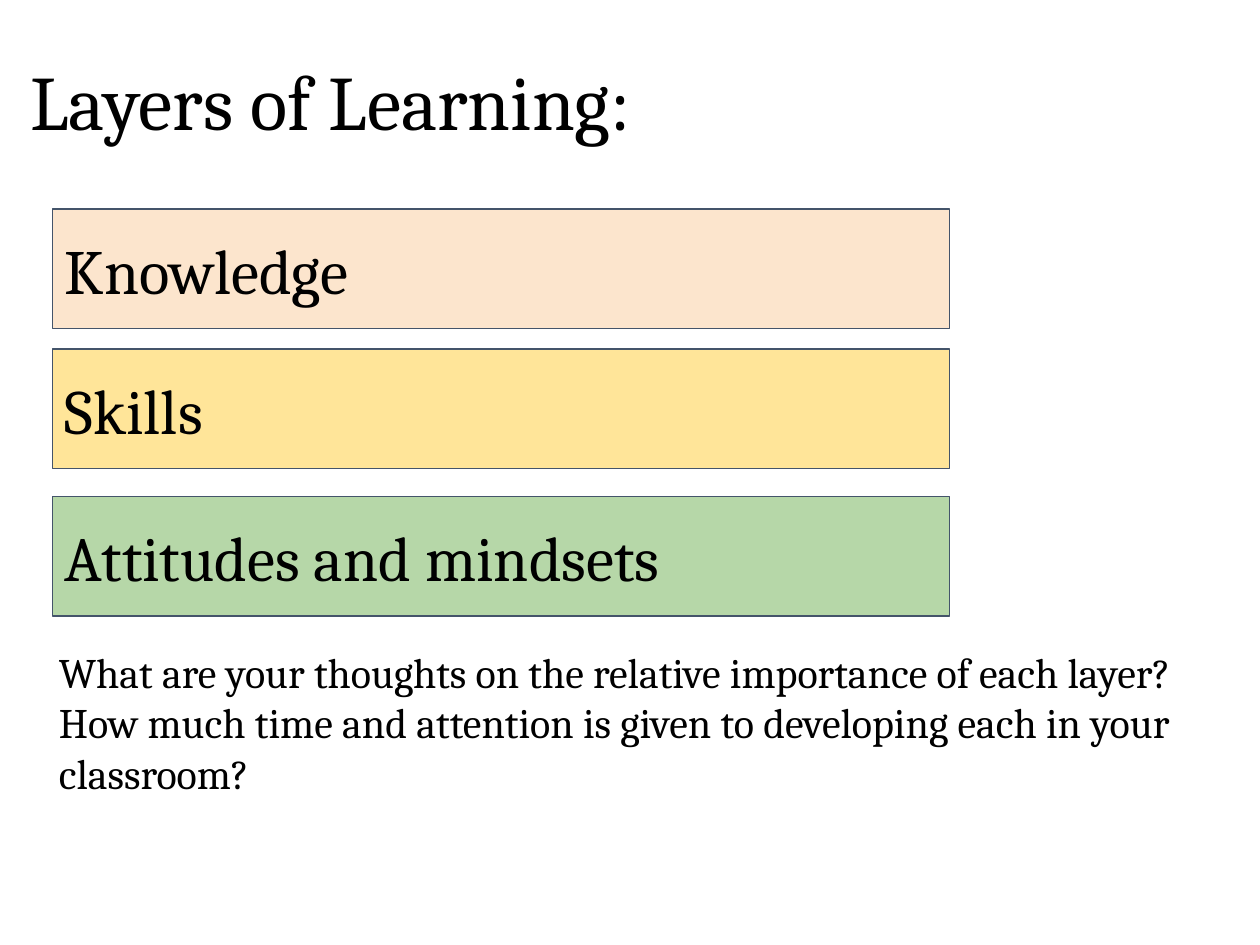
from pptx import Presentation
from pptx.dml.color import RGBColor
from pptx.enum.shapes import MSO_SHAPE
from pptx.enum.text import MSO_ANCHOR, PP_ALIGN
from pptx.util import Pt

BAR_LEFT, BAR_WIDTH, BAR_HEIGHT = 30, 512.6, 68.4
LAYERS = [
    ("Knowledge", 119.5, "FCE5CD"),
    ("Skills", 199.4, "FFE599"),
    ("Attitudes and mindsets", 283.7, "B6D7A8"),
]
QUESTION = (
    "What are your thoughts on the relative importance of each layer? "
    "How much time and attention is given to developing each in your classroom?"
)


def color(hex_value):
    return RGBColor.from_string(hex_value)


def set_attributes(target, values):
    for name, value in values.items():
        setattr(target, name, value)


def write_text(shape, text, size, line_spacing=1.0):
    """Fill the shape with one left-aligned, vertically centred paragraph."""
    frame = shape.text_frame
    frame.text = text
    set_attributes(frame, {
        "word_wrap": True,
        "vertical_anchor": MSO_ANCHOR.MIDDLE,
        "margin_left": Pt(7.2),
        "margin_right": Pt(7.2),
        "margin_top": Pt(7.2),
        "margin_bottom": Pt(7.2),
    })
    paragraph = frame.paragraphs[0]
    set_attributes(paragraph, {
        "alignment": PP_ALIGN.LEFT,
        "line_spacing": line_spacing,
    })
    set_attributes(paragraph.font, {"name": "Cambria", "size": Pt(size)})
    paragraph.font.color.rgb = color("000000")


def add_title(slide, text):
    title = slide.shapes.title
    set_attributes(title, {
        "left": Pt(10),
        "top": Pt(8),
        "width": Pt(620.6),
        "height": Pt(104.4),
    })
    write_text(title, text, 44, line_spacing=0.9)


def add_layer_bar(slide, text, top, fill):
    bar = slide.shapes.add_shape(
        MSO_SHAPE.RECTANGLE, Pt(BAR_LEFT), Pt(top), Pt(BAR_WIDTH), Pt(BAR_HEIGHT)
    )
    bar.shadow.inherit = False
    bar.fill.solid()
    bar.fill.fore_color.rgb = color(fill)
    bar.line.color.rgb = color("44546A")
    bar.line.width = Pt(0.75)
    write_text(bar, text, 36)


def add_question(slide, text):
    box = slide.shapes.add_textbox(Pt(26.6), Pt(372.2), Pt(666.7), Pt(80.6))
    write_text(box, text, 24)


def main():
    presentation = Presentation()
    set_attributes(presentation, {"slide_width": Pt(720), "slide_height": Pt(540)})
    title_only = presentation.slide_layouts.get_by_name("Title Only")
    slide = presentation.slides.add_slide(title_only)
    add_title(slide, "Layers of Learning:")
    for text, top, fill in LAYERS:
        add_layer_bar(slide, text, top, fill)
    add_question(slide, QUESTION)
    presentation.save("out.pptx")


if __name__ == "__main__":
    main()
